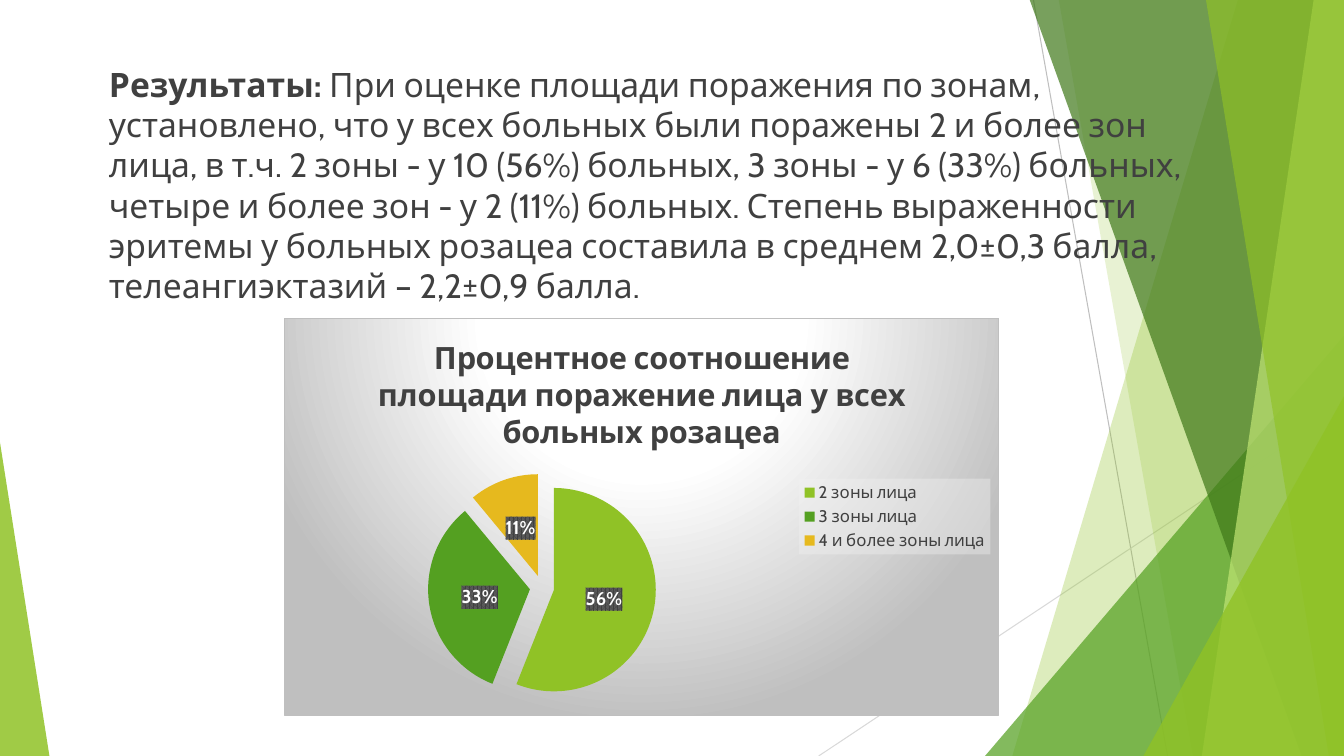
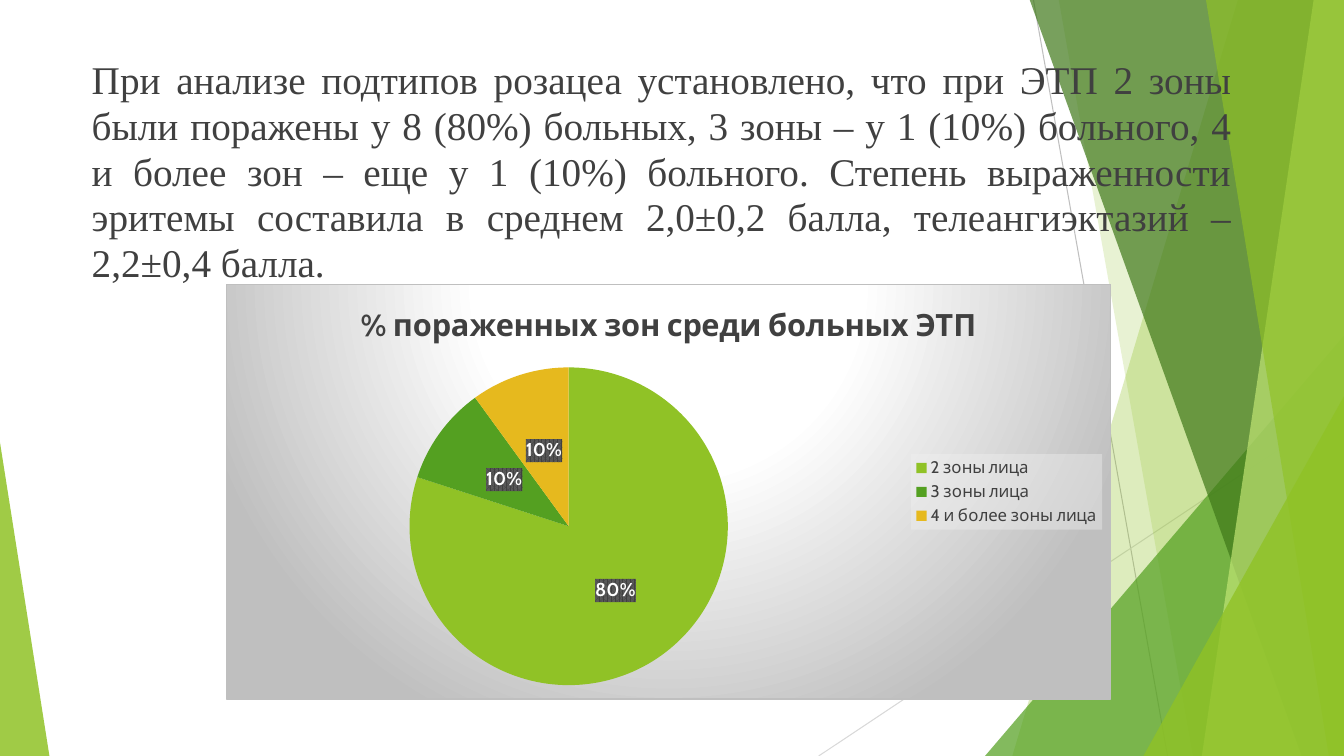
from dataclasses import dataclass

from lxml import etree
from pptx import Presentation
from pptx.chart.data import CategoryChartData
from pptx.dml.color import RGBColor
from pptx.enum.chart import XL_CHART_TYPE, XL_LABEL_POSITION, XL_LEGEND_POSITION
from pptx.enum.shapes import MSO_CONNECTOR, MSO_SHAPE
from pptx.enum.text import MSO_ANCHOR, MSO_AUTO_SIZE, PP_ALIGN
from pptx.oxml import parse_xml
from pptx.oxml.ns import nsdecls, qn
from pptx.util import Inches, Pt

PIE = XL_CHART_TYPE.PIE
CENTER = XL_LABEL_POSITION.CENTER
LEGEND_RIGHT = XL_LEGEND_POSITION.RIGHT
STRAIGHT = MSO_CONNECTOR.STRAIGHT
TRIANGLE = MSO_SHAPE.ISOSCELES_TRIANGLE
TOP = MSO_ANCHOR.TOP
NO_AUTOFIT = MSO_AUTO_SIZE.NONE
LEFT, JUSTIFY = PP_ALIGN.LEFT, PP_ALIGN.JUSTIFY


@dataclass(frozen=True)
class Theme:
    lime: str = "90C226"
    green: str = "54A021"
    forest: str = "3F7819"
    pale: str = "C0E474"
    gold: str = "E6B91E"
    text: str = "404040"
    white: str = "FFFFFF"
    black: str = "000000"
    gray: str = "BFBFBF"
    light_gray: str = "D9D9D9"
    legend_back: str = "F2F2F2"
    label_back: str = "595959"
    font: str = "Cabin"
    serif: str = "Times New Roman"
    hairline: float = 0.75
    space_before: float = 10
    chart_size: float = 10
    legend_size: float = 12
    label_size: float = 13.3
    title_size: float = 22


THEME = Theme()
WIDTH, HEIGHT = 13.33, 7.5
RIBBON_TOP = -0.01

RAYS = [
    ((10.25, 0), (11.58, HEIGHT), THEME.gray),
    ((WIDTH, 4.03), (8.12, HEIGHT), THEME.light_gray),
]
# RIBBON: top x, bottom x, colour, opacity; CORNER: left, top, width, apex, colour, opacity
DECOR = [
    ("ribbon", 12.28, 10.04, THEME.lime, 30),
    ("ribbon", 10.5, 11.83, THEME.lime, 20),
    ("corner", 9.77, 3.33, 3.56, 1, THEME.green, 72),
    ("ribbon", 10.21, 12.91, THEME.forest, 70),
    ("ribbon", 13.03, 11.92, THEME.pale, 70),
    ("ribbon", 11.96, 13.18, THEME.lime, 65),
    ("corner", 11.34, 3.93, 1.99, 1, THEME.lime, 80),
    ("corner", 0, 4.39, 0.49, 0, THEME.lime, 85),
]

ZONES = ["2 зоны лица", "3 зоны лица", "4 и более зоны лица"]
ZONE_COLORS = [THEME.lime, THEME.green, THEME.gold]

SLIDES = [
    {
        "summary": [
            ("Результаты:", True),
            (" При оценке площади поражения по зонам, установлено, что у всех больных "
             "были поражены 2 и более зон лица, в т.ч. 2 зоны - у 10 (56%) больных, "
             "3 зоны - у 6 (33%) больных, четыре и более зон - у 2 (11%) больных. "
             "Степень выраженности эритемы у больных розацеа составила в среднем "
             "2,0±0,3 балла, телеангиэктазий – 2,2±0,9 балла.", False),
        ],
        "summary_box": (0.98, 0.58, 11.1, 2.93),
        "font": THEME.font, "size": 24, "align": LEFT, "spacing": 1.0,
        "chart_title": "Процентное соотношение площади поражение лица у всех больных розацеа",
        "chart_box": (2.82, 3.15, 7.09, 3.95),
        "shares": [56, 33, 11],
        "explosion": 12,
    },
    {
        "summary": [
            ("При анализе подтипов розацеа установлено, что при ЭТП 2 зоны были поражены "
             "у 8 (80%) больных, 3 зоны – у 1 (10%) больного, 4 и более зон – еще у 1 (10%) "
             "больного. Степень выраженности эритемы составила в среднем 2,0±0,2 балла, "
             "телеангиэктазий – 2,2±0,4 балла.", False),
        ],
        "summary_box": (0.81, 0.53, 11.5, 2.54),
        "font": THEME.serif, "size": 28, "align": JUSTIFY, "spacing": 0.97,
        "chart_title": "% пораженных зон среди больных ЭТП",
        "chart_box": (2.24, 2.82, 8.78, 4.12),
        "shares": [80, 10, 10],
        "explosion": 0,
    },
]


def rgb(color):
    return RGBColor.from_string(color)


def set_font(font, size, color, bold=False, name=THEME.font):
    font.size, font.bold, font.name = Pt(size), bold, name
    font.color.rgb = rgb(color)


def color_xml(color, opacity=100):
    return f'<a:srgbClr val="{color}"><a:alpha val="{opacity * 1000}"/></a:srgbClr>'


def chart_props(content):
    return parse_xml(f'<c:spPr {nsdecls("c", "a")}>{content}</c:spPr>')


def add_ray(shapes, start, end, color):
    ray = shapes.add_connector(STRAIGHT, *map(Inches, start + end))
    ray.line.color.rgb = rgb(color)
    ray.line.width = Pt(THEME.hairline)
    etree.SubElement(ray.element.spPr, qn("a:effectLst"))
    return ray


def add_ribbon(shapes, top_x, bottom_x):
    outline = shapes.build_freeform(Inches(top_x), Inches(RIBBON_TOP))
    corners = [(WIDTH, RIBBON_TOP), (WIDTH, HEIGHT), (bottom_x, HEIGHT)]
    outline.add_line_segments([(Inches(x), Inches(y)) for x, y in corners], close=True)
    return outline.convert_to_shape()


def add_corner(shapes, left, top, width, apex):
    corner = shapes.add_shape(TRIANGLE, *map(Inches, (left, top, width, HEIGHT - top)))
    corner.adjustments[0] = apex
    return corner


def decorate(layout, slide):
    builders = {"ribbon": add_ribbon, "corner": add_corner}
    decor = [add_ray(slide.shapes, *ray) for ray in RAYS]
    for kind, *place, color, opacity in DECOR:
        facet = builders[kind](slide.shapes, *place)
        facet.shadow.inherit = False
        facet.line.fill.background()
        facet.fill.solid()
        facet.fill.fore_color.rgb = rgb(color)
        tint = facet.element.spPr.find(qn("a:solidFill")).find(qn("a:srgbClr"))
        etree.SubElement(tint, qn("a:alpha")).set("val", str(opacity * 1000))
        decor.append(facet)
    for position, part in enumerate(decor, start=2):
        layout.shapes.element.insert(position, part.element)


def write_summary(slide, content):
    summary = slide.placeholders[1]
    summary.left, summary.top, summary.width, summary.height = map(Inches, content["summary_box"])
    frame = summary.text_frame
    frame.word_wrap = True
    frame.auto_size = NO_AUTOFIT
    frame.vertical_anchor = TOP
    paragraph = frame.paragraphs[0]
    paragraph.alignment = content["align"]
    paragraph.line_spacing = content["spacing"]
    paragraph.space_before = Pt(THEME.space_before)
    props = paragraph._p.get_or_add_pPr()
    props.set("marL", "0")
    props.set("indent", "0")
    etree.SubElement(props, qn("a:buNone"))
    for text, bold in content["summary"]:
        run = paragraph.add_run()
        run.text = text
        set_font(run.font, content["size"], THEME.text, bold, content["font"])


def add_pie(slide, content):
    data = CategoryChartData()
    data.categories = ZONES
    data.add_series(content["chart_title"], content["shares"])
    chart = slide.shapes.add_chart(PIE, *map(Inches, content["chart_box"]), data).chart
    set_font(chart.font, THEME.chart_size, THEME.black)

    chart.has_title = True
    title = chart.chart_title.text_frame.paragraphs[0].add_run()
    title.text = content["chart_title"]
    set_font(title.font, THEME.title_size, THEME.text, True)

    chart.has_legend = True
    legend = chart.legend
    legend.position = LEGEND_RIGHT
    legend.include_in_layout = False
    set_font(legend.font, THEME.legend_size, THEME.text)

    plot = chart.plots[0]
    plot.vary_by_categories = True
    series = plot.series[0]
    for index, color in enumerate(ZONE_COLORS):
        fill = series.points[index].format.fill
        fill.solid()
        fill.fore_color.rgb = rgb(color)
    if content["explosion"]:
        explosion = etree.Element(qn("c:explosion"), val=str(content["explosion"]))
        series._element.find(qn("c:dPt")).addprevious(explosion)

    labels = series.data_labels
    labels.show_percentage = True
    labels.show_value = False
    labels.number_format = "0%"
    labels.number_format_is_linked = False
    labels.position = CENTER
    set_font(labels.font, THEME.label_size, THEME.white, True)

    stops = [(0, THEME.white), (39, THEME.white), (100, THEME.gray)]
    gradient = "".join(f'<a:gs pos="{at * 1000}">{color_xml(color)}</a:gs>' for at, color in stops)
    backs = [
        (chart.element,
         f'<a:gradFill><a:gsLst>{gradient}</a:gsLst><a:path path="circle">'
         '<a:fillToRect l="50000" t="-80000" r="50000" b="180000"/></a:path></a:gradFill>'
         f'<a:ln w="{Pt(THEME.hairline)}"><a:solidFill>{color_xml(THEME.gray)}</a:solidFill></a:ln>'),
        (legend._element, f"<a:solidFill>{color_xml(THEME.legend_back, 39)}</a:solidFill>"),
        (labels._element,
         f'<a:pattFill prst="pct75"><a:fgClr>{color_xml(THEME.text)}</a:fgClr>'
         f"<a:bgClr>{color_xml(THEME.label_back)}</a:bgClr></a:pattFill>"),
    ]
    for owner, fill_xml in backs:
        owner.find(qn("c:txPr")).addprevious(chart_props(fill_xml))


def main():
    deck = Presentation()
    deck.slide_width, deck.slide_height = Inches(WIDTH), Inches(HEIGHT)
    layout = deck.slide_layouts[1]
    for number, content in enumerate(SLIDES):
        slide = deck.slides.add_slide(layout)
        title = slide.shapes.title.element
        title.getparent().remove(title)
        if number == 0:
            decorate(layout, slide)
        write_summary(slide, content)
        add_pie(slide, content)
    deck.save("out.pptx")


if __name__ == "__main__":
    main()
